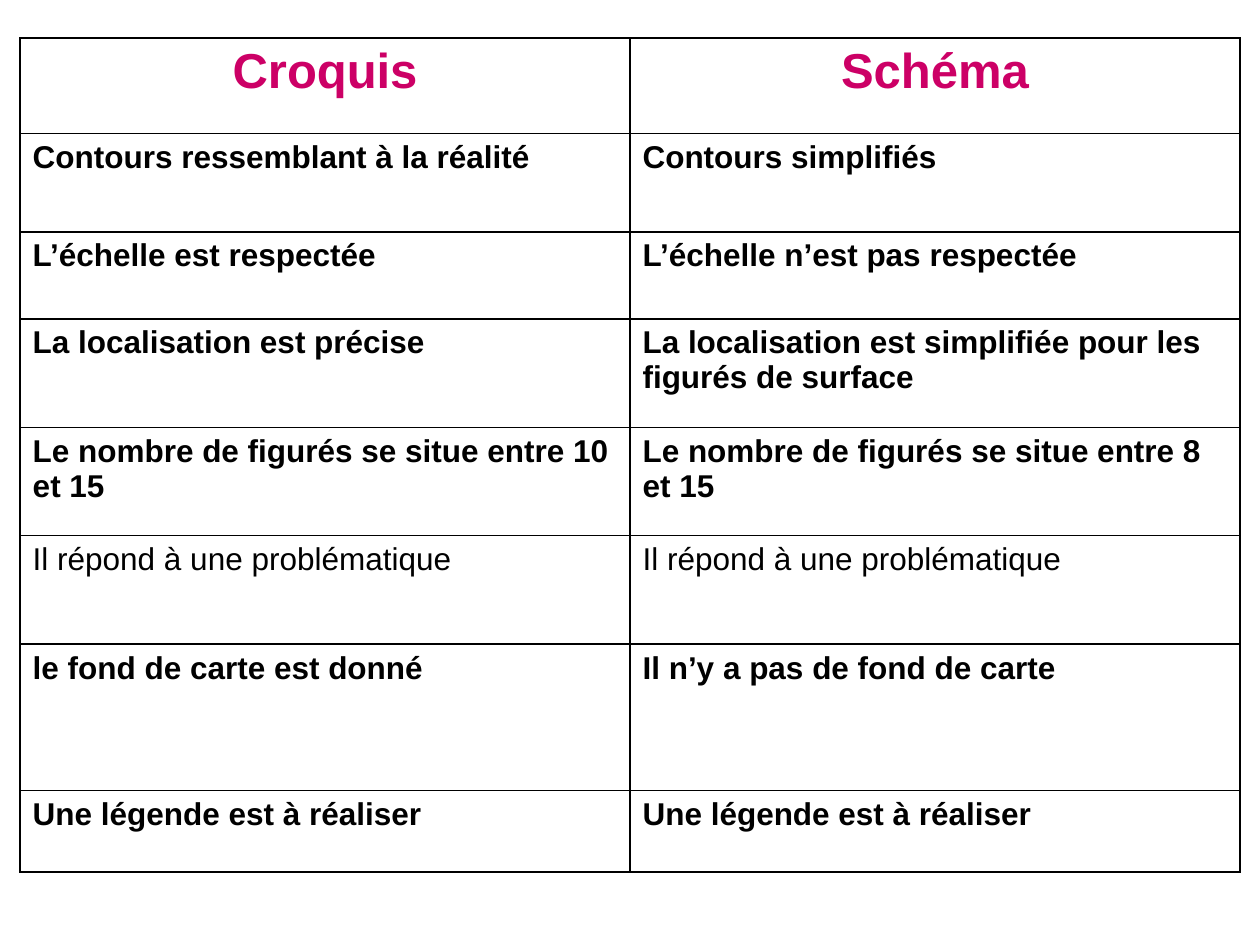
from lxml.etree import SubElement
from pptx import Presentation
from pptx.dml.color import RGBColor
from pptx.enum.text import PP_ALIGN
from pptx.oxml.ns import qn
from pptx.util import Pt

BLACK = "000000"
PINK = "CC0066"
PLAIN = 5  # the only body row that is not bold

ROWS = [
    ("Croquis", "Schéma", 54.7),
    ("Contours ressemblant à la réalité", "Contours simplifiés", 56.2),
    ("L’échelle est respectée", "L’échelle n’est pas respectée", 49.7),
    ("La localisation est précise",
     "La localisation est simplifiée pour les figurés de surface", 62),
    ("Le nombre de figurés se situe entre 10 et 15",
     "Le nombre de figurés se situe entre 8 et 15", 62),
    ("Il répond à une problématique", "Il répond à une problématique", 62),
    ("le fond de carte est donné", "Il n’y a pas de fond de carte", 83.5),
    ("Une légende est à réaliser", "Une légende est à réaliser", 46.8),
]


def color(code):
    return RGBColor.from_string(code)


def border(cell):
    props = cell._tc.get_or_add_tcPr()
    for side in ("a:lnL", "a:lnR", "a:lnT", "a:lnB"):
        line = SubElement(props, qn(side), w=str(Pt(1)))
        fill = SubElement(line, qn("a:solidFill"))
        SubElement(fill, qn("a:srgbClr"), val=BLACK)


def write(cell, text, head, bold):
    border(cell)
    cell.fill.background()
    cell.text = text
    para = cell.text_frame.paragraphs[0]
    para.alignment = PP_ALIGN.CENTER if head else PP_ALIGN.LEFT
    para.space_before = Pt(7 if head else 4)
    font = para.font
    font.name = "Arial"
    font.size = Pt(28 if head else 18)
    font.bold = bold
    font.color.rgb = color(PINK if head else BLACK)


def add_grid(slide):
    high = sum(row[-1] for row in ROWS)
    frame = slide.shapes.add_table(
        len(ROWS), 2, Pt(11.5), Pt(21.6), Pt(697), Pt(high))
    table = frame.table
    for i, (*texts, size) in enumerate(ROWS):
        table.rows[i].height = Pt(size)
        for j, text in enumerate(texts):
            write(table.cell(i, j), text, i == 0, i != PLAIN)


def main():
    deck = Presentation()
    deck.slide_width, deck.slide_height = Pt(720), Pt(540)
    slide = deck.slides.add_slide(deck.slide_layouts[6])
    add_grid(slide)
    deck.save("out.pptx")


if __name__ == "__main__":
    main()
